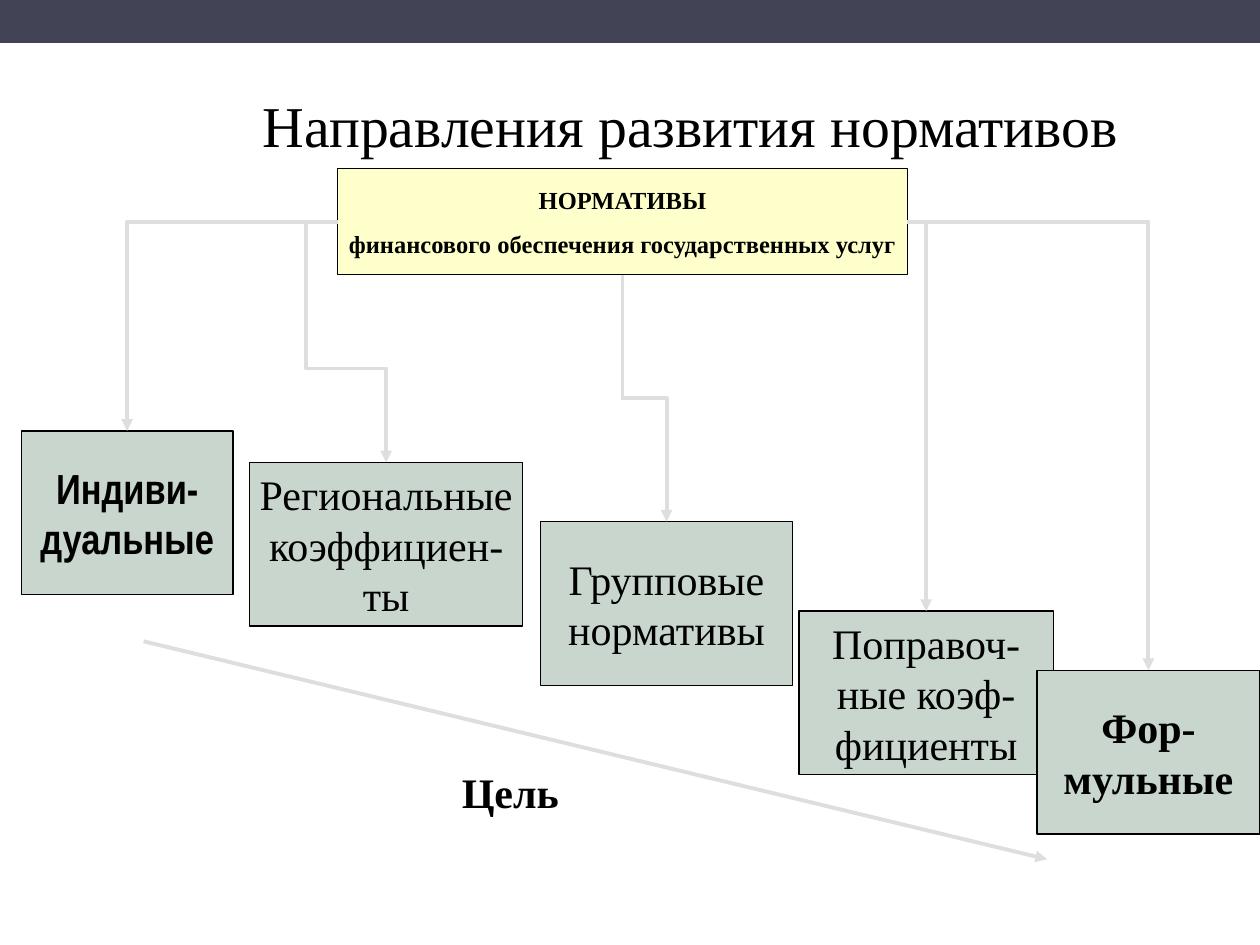
from dataclasses import dataclass

from lxml import etree
from pptx import Presentation
from pptx.dml.color import RGBColor
from pptx.enum.shapes import MSO_CONNECTOR, MSO_SHAPE
from pptx.enum.text import MSO_ANCHOR, PP_ALIGN
from pptx.oxml.ns import qn
from pptx.util import Inches, Pt

RECTANGLE = MSO_SHAPE.RECTANGLE
STRAIGHT, ELBOW = MSO_CONNECTOR.STRAIGHT, MSO_CONNECTOR.ELBOW
MIDDLE, CENTER = MSO_ANCHOR.MIDDLE, PP_ALIGN.CENTER
TOP, LEFT, BOTTOM, RIGHT = range(4)

# Grid of 100 columns by 75 rows
WIDTH, HEIGHT = Inches(10), Inches(7.5)
COLUMN, ROW = WIDTH / 100, HEIGHT / 75


@dataclass(frozen=True)
class Theme:
    band: str = "424456"
    header: str = "FFFFCC"
    step: str = "C8D6CE"
    arrow: str = "DEDEDE"
    ink: str = "000000"
    serif: str = "Times New Roman"
    narrow: str = "Arial Narrow"
    title_size: int = 33
    header_size: int = 14
    step_size: int = 24
    border: float = 0.75
    arrow_width: float = 2.25


THEME = Theme()

# Box in grid units, text lines, font, bold, connector start side and shape
STEPS = [
    ((1.7, 34.2, 16.8, 13), ["Индиви-дуальные"], THEME.narrow, True,
     LEFT, "bentConnector2", {}),
    ((19.8, 36.7, 21.7, 13), ["Региональные коэффициен-ты"], THEME.serif, False,
     LEFT, "bentConnector4", {"adj1": -64900, "adj2": 61000}),
    ((42.9, 41.4, 20, 13), ["Групповые", "нормативы"], THEME.serif, False,
     BOTTOM, "bentConnector3", {"adj1": 50000}),
    ((63.4, 48.5, 20.2, 13), ["Поправоч-ные коэф-фициенты"], THEME.serif, False,
     RIGHT, "bentConnector2", {}),
    ((82.3, 53.2, 17.7, 13), ["Фор-мульные"], THEME.serif, True,
     RIGHT, "bentConnector2", {}),
]


def place(box):
    left, top, width, height = box
    return [int(left * COLUMN), int(top * ROW), int(width * COLUMN), int(height * ROW)]


def apply(target, values):
    for name, value in values.items():
        setattr(target, name, value)


def write(shape, lines, size, font=THEME.serif, bold=False, gap=0, **frame_format):
    frame = shape.text_frame
    apply(frame, {"word_wrap": True, "vertical_anchor": MIDDLE, **frame_format})
    for index, line in enumerate(lines):
        para = frame.add_paragraph() if index else frame.paragraphs[0]
        apply(para, {"alignment": CENTER, "space_before": Pt(gap if index else 0)})
        span = para.add_run()
        span.text = line
        apply(span.font, {"name": font, "size": Pt(size), "bold": bold})
        span.font.color.rgb = RGBColor.from_string(THEME.ink)


def add_panel(page, box, fill, bordered=True):
    panel = page.shapes.add_shape(RECTANGLE, *place(box))
    panel.shadow.inherit = False
    panel.fill.solid()
    panel.fill.fore_color.rgb = RGBColor.from_string(fill)
    if bordered:
        panel.line.color.rgb = RGBColor.from_string(THEME.ink)
        panel.line.width = Pt(THEME.border)
    else:
        panel.line.fill.background()
    return panel


def add_card(page, box, fill, lines, size, **text_format):
    card = add_panel(page, box, fill)
    write(card, lines, size, margin_left=Inches(0.06), margin_right=Inches(0.06),
          margin_top=Inches(0.01), margin_bottom=Inches(0.01), **text_format)
    return card


def style_arrow(arrow):
    arrow.line.color.rgb = RGBColor.from_string(THEME.arrow)
    arrow.line.width = Pt(THEME.arrow_width)
    line = arrow.line._get_or_add_ln()
    etree.SubElement(line, qn("a:tailEnd"), type="triangle")
    etree.SubElement(arrow._element.spPr, qn("a:effectLst"))


def turn_downward(arrow):
    """Make an elbow leave and arrive vertically."""
    left, top, width, height = arrow.left, arrow.top, arrow.width, arrow.height
    shift = (height - width) // 2
    apply(arrow, {"left": left - shift, "top": top + shift,
                  "width": height, "height": width})
    frame = arrow._element.spPr.find(qn("a:xfrm"))
    frame.set("rot", "16200000")
    frame.set("flipH", "1")


def add_branch(page, header, card, side, preset, adjustments):
    arrow = page.shapes.add_connector(ELBOW, 0, 0, 0, 0)
    arrow.begin_connect(header, side)
    arrow.end_connect(card, TOP)
    geometry = arrow._element.spPr.find(qn("a:prstGeom"))
    geometry.set("prst", preset)
    guides = geometry.find(qn("a:avLst"))
    for name, value in adjustments.items():
        etree.SubElement(guides, qn("a:gd"), name=name, fmla=f"val {value}")
    if side == BOTTOM:
        turn_downward(arrow)
    style_arrow(arrow)


def add_heading(page, box):
    heading = page.shapes.add_textbox(*place(box))
    write(heading, ["Направления развития нормативов"], THEME.title_size,
          margin_top=Inches(0.6), margin_bottom=0)


def add_hierarchy(page, header_box):
    header = add_card(page, header_box, THEME.header,
                      ["НОРМАТИВЫ", "финансового обеспечения государственных услуг"],
                      THEME.header_size, bold=True, gap=8)
    cards = [add_card(page, box, THEME.step, lines, THEME.step_size, font=font, bold=bold)
             for box, lines, font, bold, *_ in STEPS]
    for card, (*_, side, preset, adjustments) in zip(cards, STEPS):
        add_branch(page, header, card, side, preset, adjustments)


def add_goal(page, arrow_box, label_box):
    left, top, width, height = place(arrow_box)
    arrow = page.shapes.add_connector(STRAIGHT, left, top, left + width, top + height)
    style_arrow(arrow)
    label = page.shapes.add_textbox(*place(label_box))
    write(label, ["Цель"], THEME.step_size, bold=True)


def main():
    deck = Presentation()
    apply(deck, {"slide_width": WIDTH, "slide_height": HEIGHT})
    page = deck.slides.add_slide(deck.slide_layouts[6])
    # Top band and title
    add_panel(page, (0, 0, 100, 3.4), THEME.band, bordered=False)
    add_heading(page, (13.5, 3.7, 82.6, 6.3))
    # Header, descending steps and their branches
    add_hierarchy(page, (26.8, 13.4, 45.2, 8.4))
    # Goal arrow and label
    add_goal(page, (11.4, 50.9, 71.7, 17.3), (22.4, 60.3, 36.2, 5))
    deck.save("out.pptx")


if __name__ == "__main__":
    main()
